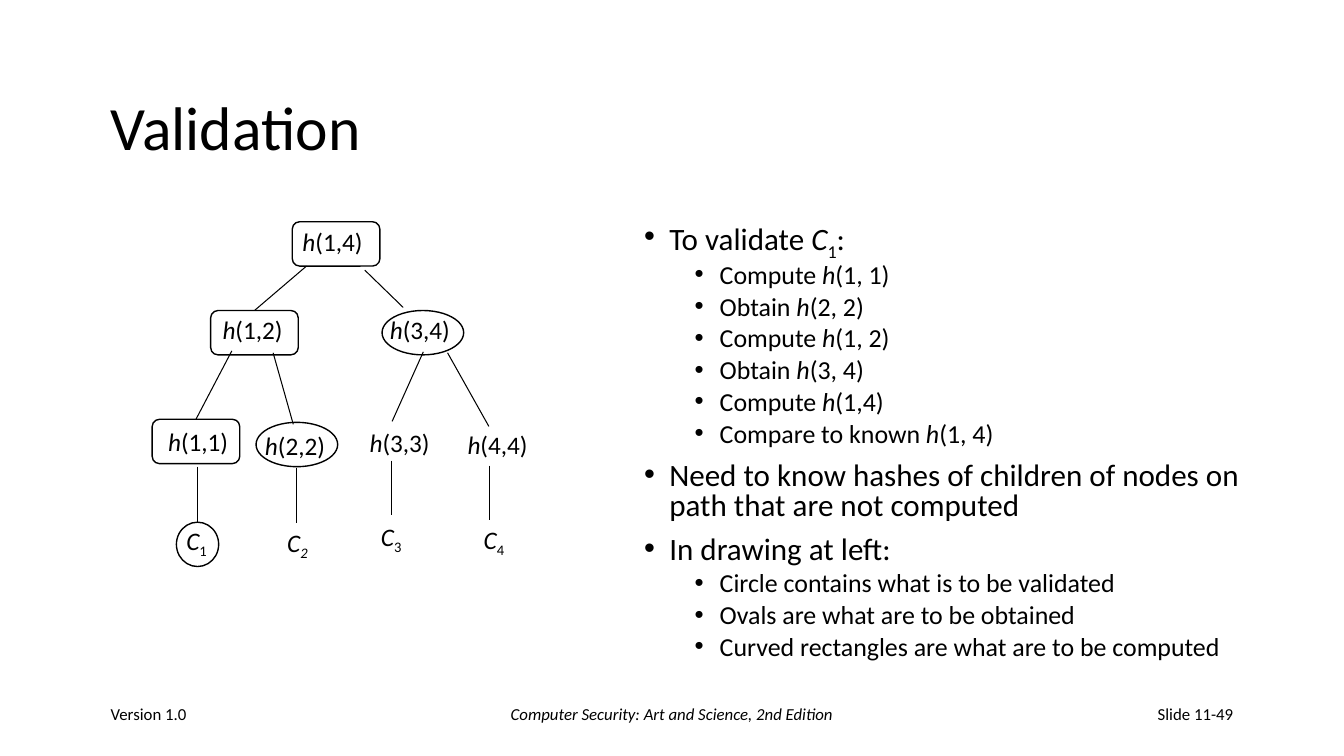
from lxml import etree
from pptx import Presentation, util as u
from pptx.dml.color import RGBColor
from pptx.enum import shapes, text
from pptx.oxml.ns import qn

FONT, BLACK = "Calibri", "000000"


def hash_of(args):
    """Runs for a hash such as h(1,4); each run is (text, style)."""
    return [("h", "italic"), (f"({args})", "")]


def block(number, style="sub"):
    """Runs for a data block such as C1 with a lowered number."""
    return [("C", "italic"), (number, style)]


# (level, runs)
BULLETS = [
    (0, [("To validate ", ""), *block("1"), (":", "")]),
    (1, [("Compute ", ""), *hash_of("1, 1")]),
    (1, [("Obtain ", ""), *hash_of("2, 2")]),
    (1, [("Compute ", ""), *hash_of("1, 2")]),
    (1, [("Obtain ", ""), *hash_of("3, 4")]),
    (1, [("Compute ", ""), *hash_of("1,4")]),
    (1, [("Compare to known ", ""), *hash_of("1, 4")]),
    (0, [("Need to know hashes of children of nodes on path that are not computed", "")]),
    (0, [("In drawing at left:", "")]),
    (1, [("Circle contains what is to be validated", "")]),
    (1, [("Ovals are what are to be obtained", "")]),
    (1, [("Curved rectangles are what are to be computed", "")]),
]
# size, indent, space before
LEVELS = [(22.2, 18, 10), (18.5, 54, 5)]

# left, width, alignment, runs
FOOTERS = [
    (72, 200, text.PP_ALIGN.LEFT, [("Version 1.0", "")]),
    (328, 304, text.PP_ALIGN.CENTER,
     [("Computer Security: Art and Science, 2nd Edition", "italic")]),
    (688, 200, text.PP_ALIGN.RIGHT, [("Slide 11-49", "")]),
]

# left, top, width, runs
LABELS = [
    (209, 158.4, 58, hash_of("1,4")),
    (151.9, 221, 58, hash_of("1,2")),
    (271.4, 221, 58, hash_of("3,4")),
    (113, 301, 58, hash_of("1,1")),
    (182.2, 303.8, 58, hash_of("2,2")),
    (257, 301.7, 58, hash_of("3,3")),
    (326.9, 303.1, 58, hash_of("4,4")),
    (126, 371.5, 30, block("1")),
    (198, 373, 30, block("2", "italic sub")),
    (265, 368.6, 30, block("3")),
    (338.4, 370.8, 30, block("4")),
]

RECTANGLE, OVAL = shapes.MSO_SHAPE.ROUNDED_RECTANGLE, shapes.MSO_SHAPE.OVAL
NODE_HEIGHT = 31.7
# name: (kind, left, top, width)
NODES = {
    "h(1,1)": (RECTANGLE, 108.7, 299.5, 62.6),
    "h(1,2)": (RECTANGLE, 150.5, 221.8, 62.6),
    "h(1,4)": (RECTANGLE, 208.8, 158.4, 62.6),
    "h(2,2)": (OVAL, 182.9, 301.7, 58.3),
    "h(3,4)": (OVAL, 272.9, 221.8, 58.3),
    "C1": (OVAL, 126, 373, 30.2),
}

# from, to, node whose top the line meets
EDGES = [
    ((218.9, 190.1), (179.3, 221), "h(1,2)"),
    ((260.6, 193), (288, 219.6), None),
    ((165.6, 250.6), (143.3, 300.2), "h(1,1)"),
    ((195.1, 252), (209.5, 303.1), None),
    ((302.4, 251.3), (280.1, 301), None),
    ((319.7, 252), (349.2, 304.6), None),
    ((141.1, 333.4), (141.1, 373), "C1"),
    ((211.7, 334.1), (211.7, 373.7), None),
    ((279.4, 329), (279.4, 367.9), None),
    ((349.9, 332.6), (349.9, 371.5), None),
]


def color(value):
    return RGBColor.from_string(value)


def add_runs(paragraph, runs, size):
    for words, style in runs:
        run = paragraph.add_run()
        run.text = words
        run.font.name = FONT
        run.font.size = u.Pt(size)
        run.font.italic = "italic" in style
        run.font.color.rgb = color(BLACK)
        if "sub" in style:
            run._r.get_or_add_rPr().set("baseline", "-25000")


def add_box(slide, left, top, width, height, anchor=text.MSO_ANCHOR.TOP, wrap=True):
    frame = slide.shapes.add_textbox(
        u.Pt(left), u.Pt(top), u.Pt(width), u.Pt(height)).text_frame
    frame.word_wrap = wrap
    frame.vertical_anchor = anchor
    return frame


def add_bullets(slide):
    frame = add_box(slide, 453, 156, 450, 324)
    for index, (level, runs) in enumerate(BULLETS):
        size, indent, gap = LEVELS[level]
        paragraph = frame.add_paragraph() if index else frame.paragraphs[0]
        paragraph.level = level
        paragraph.line_spacing = 0.8
        paragraph.space_before = u.Pt(gap if index else 0)
        properties = paragraph._p.get_or_add_pPr()
        properties.set("marL", str(u.Pt(indent)))
        properties.set("indent", str(u.Pt(-18)))
        etree.SubElement(properties, qn("a:buFont")).set("typeface", "Arial")
        etree.SubElement(properties, qn("a:buChar")).set("char", "•")
        add_runs(paragraph, runs, size)


def add_tree(slide):
    nodes = {}
    for name, (kind, left, top, width) in NODES.items():
        shape = slide.shapes.add_shape(
            kind, u.Pt(left), u.Pt(top), u.Pt(width), u.Pt(NODE_HEIGHT))
        shape.shadow.inherit = False
        shape.fill.background()
        shape.line.color.rgb = color(BLACK)
        shape.line.width = u.Pt(1)
        nodes[name] = shape
    for start, end, target in EDGES:
        connector = slide.shapes.add_connector(
            shapes.MSO_CONNECTOR.STRAIGHT, *map(u.Pt, start + end))
        connector.line.color.rgb = color(BLACK)
        connector.line.width = u.Pt(0.75)
        etree.SubElement(connector._element.spPr, qn("a:effectLst"))
        if target:
            connector.end_connect(nodes[target], 0)
    for left, top, width, runs in LABELS:
        frame = add_box(slide, left, top, width, 29, wrap=False)
        add_runs(frame.paragraphs[0], runs, 18)


def main():
    presentation = Presentation()
    presentation.slide_width, presentation.slide_height = u.Pt(960), u.Pt(540)
    slide = presentation.slides.add_slide(presentation.slide_layouts[6])

    title = add_box(slide, 72, 48, 816, 90, text.MSO_ANCHOR.MIDDLE).paragraphs[0]
    title.line_spacing = 0.9
    add_runs(title, [("Validation", "")], 44)

    add_bullets(slide)
    for left, width, alignment, runs in FOOTERS:
        frame = add_box(slide, left, 492, width, 36, text.MSO_ANCHOR.MIDDLE)
        frame.paragraphs[0].alignment = alignment
        add_runs(frame.paragraphs[0], runs, 12)
    add_tree(slide)
    presentation.save("out.pptx")


if __name__ == "__main__":
    main()
